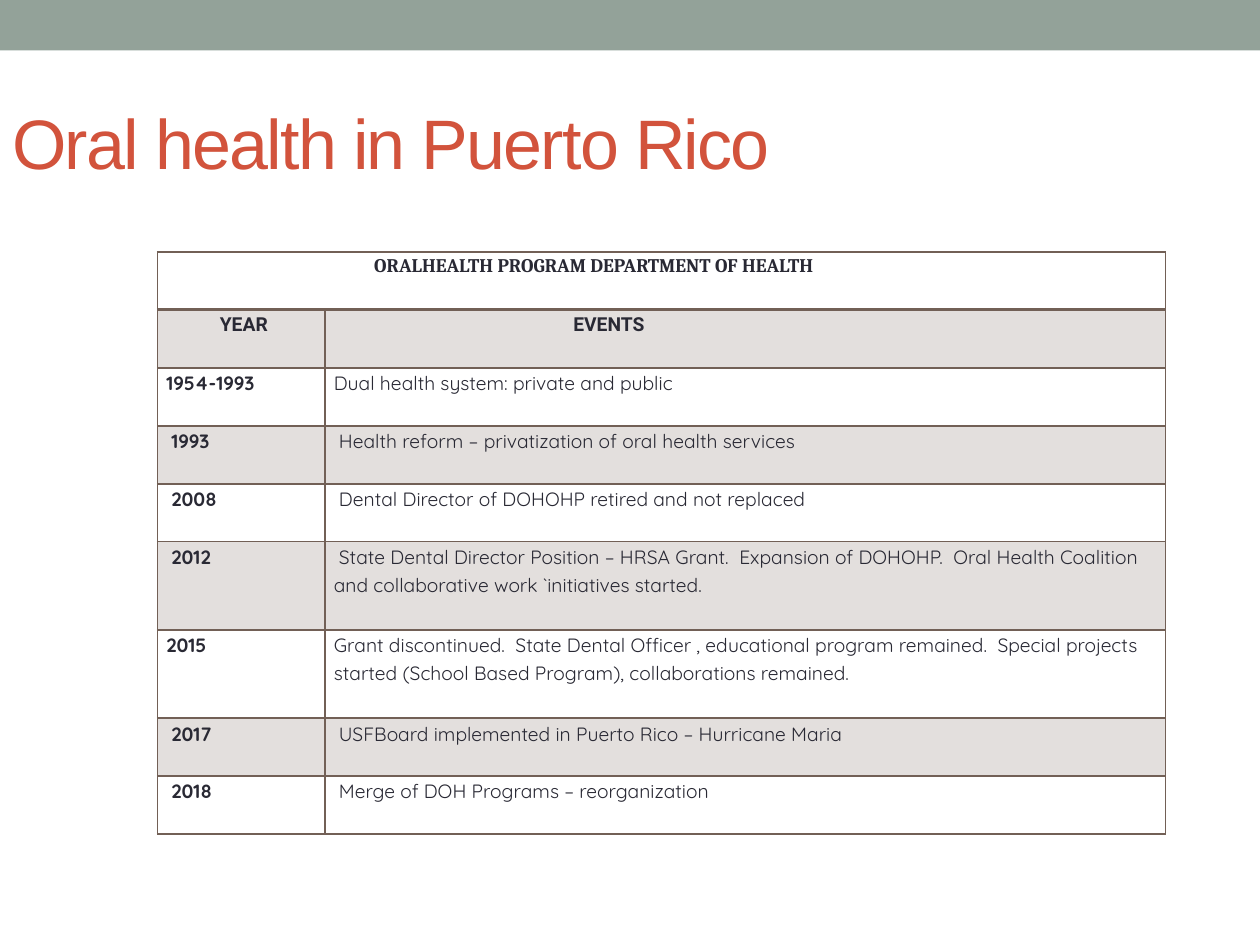
"""Build a slide with the timeline of oral health in Puerto Rico."""
from lxml.etree import SubElement
from pptx import Presentation
from pptx.dml.color import RGBColor
from pptx.enum.shapes import MSO_SHAPE
from pptx.enum.text import MSO_ANCHOR, PP_ALIGN
from pptx.oxml.ns import qn
from pptx.util import Inches, Pt

SAGE = RGBColor(0x93, 0xA2, 0x99)
RUST = RGBColor(0xD2, 0x53, 0x3C)
INK = RGBColor(0x29, 0x29, 0x34)
BROWN = RGBColor(0x72, 0x60, 0x56)
TINT = RGBColor(0xE3, 0xDF, 0xDD)


def write(frame, text, font="Quicksand", size=11, color=INK, bold=False,
          align=PP_ALIGN.LEFT, space=1.15, indent=0, track=0):
    para = frame.paragraphs[0]
    para.alignment = align
    para.line_spacing = space
    if indent:
        para._p.get_or_add_pPr().set("indent", str(Inches(indent)))
    run = para.add_run()
    run.text = text
    run.font.name = font
    run.font.size = Pt(size)
    run.font.bold = bold
    run.font.color.rgb = color
    if track:
        run.font._element.set("spc", str(track))


def edge(cell, **sides):
    props = cell._tc.get_or_add_tcPr()
    for side, width in sides.items():
        line = SubElement(props, qn(f"a:ln{side}"), w=str(Pt(width)))
        fill = SubElement(line, qn("a:solidFill"))
        SubElement(fill, qn("a:srgbClr"), val=str(BROWN))


prs = Presentation()
prs.slide_width = Inches(10)
prs.slide_height = Inches(7.5)
slide = prs.slides.add_slide(prs.slide_layouts[6])

band = slide.shapes.add_shape(MSO_SHAPE.RECTANGLE, 0, 0, Inches(10), Inches(0.4))
band.shadow.inherit = False
band.fill.solid()
band.fill.fore_color.rgb = SAGE
band.line.fill.background()

title = slide.shapes.add_textbox(0, Inches(0.58), Inches(9), Inches(1.08)).text_frame
title.word_wrap = True
title.vertical_anchor = MSO_ANCHOR.MIDDLE
write(title, "Oral health in Puerto Rico", font="Arial", size=40, color=RUST,
      space=1.0, track=-100)

events = [
    ("1954-1993", "Dual health system: private and public", 0),
    ("1993", "Health reform – privatization of oral health services", 0.04),
    ("2008", "Dental Director of DOHOHP retired and not replaced", 0.04),
    ("2012", "State Dental Director Position – HRSA Grant.  Expansion of DOHOHP.  "
     "Oral Health Coalition and collaborative work `initiatives started.", 0.04),
    ("2015", "Grant discontinued.  State Dental Officer , educational program remained.  "
     "Special projects started (School Based Program), collaborations remained.", 0),
    ("2017", "USFBoard implemented in Puerto Rico – Hurricane Maria", 0.04),
    ("2018", "Merge of DOH Programs – reorganization", 0.04),
]
tall = ("2012", "2015")
highs = [0.46, 0.46] + [0.7 if year in tall else 0.46 for year, _, _ in events]

table = slide.shapes.add_table(len(highs), 2, Inches(1.25), Inches(2),
                               Inches(8), Inches(sum(highs))).table
table.first_row = False
table.horz_banding = False
for col, width in zip(table.columns, (1.33, 6.67)):
    col.width = Inches(width)

for num, high in enumerate(highs):
    table.rows[num].height = Inches(high)
    for cell in table.rows[num].cells:
        cell.margin_left = cell.margin_right = Inches(0.07)
        cell.margin_top = cell.margin_bottom = 0
        edge(cell, L=1, R=1, T=2 if num == 1 else 1, B=2 if num == 0 else 1)
        if num % 2:
            cell.fill.solid()
            cell.fill.fore_color.rgb = TINT
        else:
            cell.fill.background()

head = table.cell(0, 0)
head.merge(table.cell(0, 1))
head.margin_left = Inches(1.72)
write(head.text_frame, "ORALHEALTH PROGRAM DEPARTMENT OF HEALTH", font="Cambria", bold=True)

write(table.cell(1, 0).text_frame, "YEAR", font="Roboto", bold=True,
      align=PP_ALIGN.CENTER, indent=0.04)
table.cell(1, 1).margin_left = Inches(1.97)
write(table.cell(1, 1).text_frame, "EVENTS", font="Roboto", bold=True)

for num, (year, event, indent) in enumerate(events, 2):
    write(table.cell(num, 0).text_frame, year, bold=True, indent=indent)
    write(table.cell(num, 1).text_frame, event, indent=indent)

prs.save("out.pptx")
